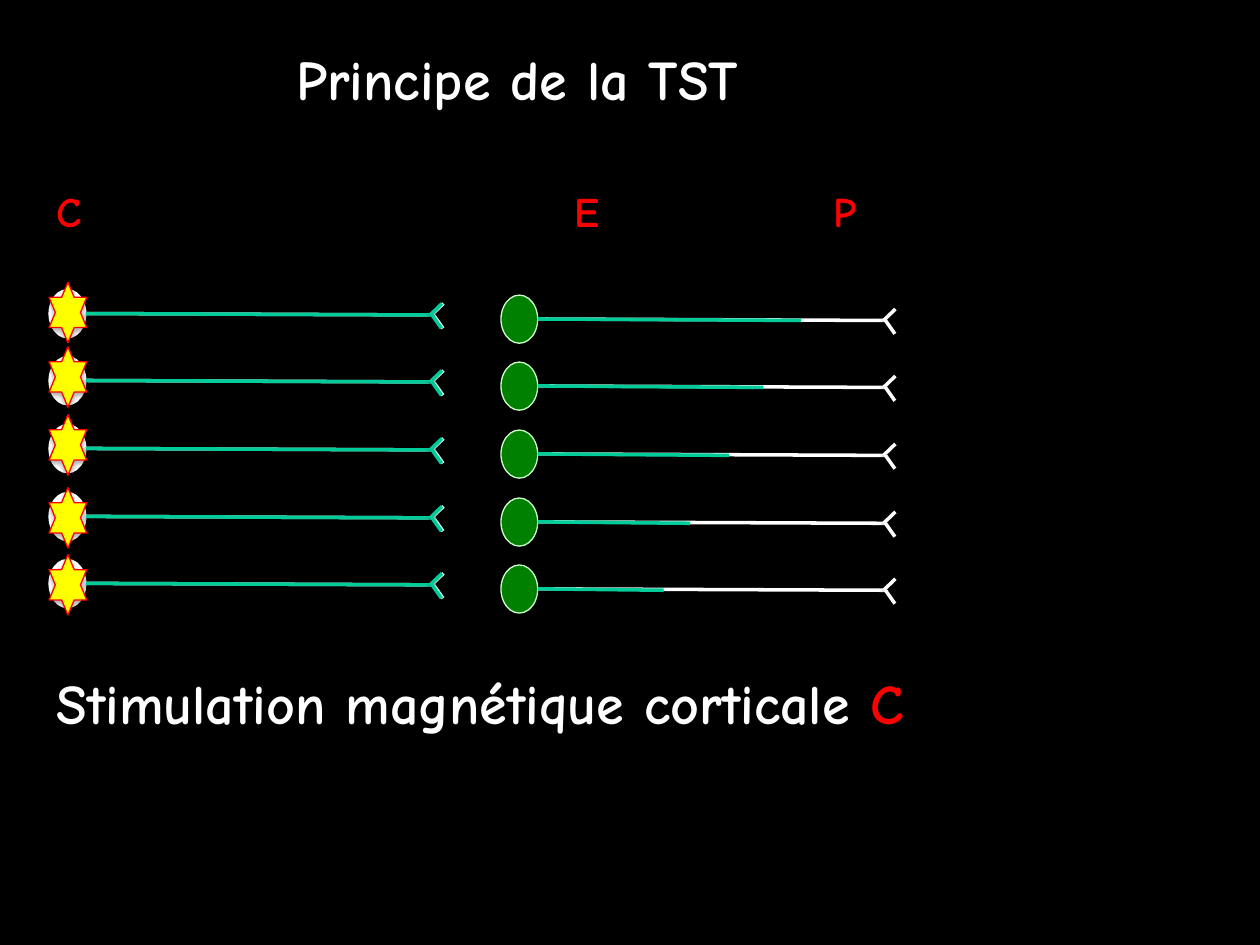
from lxml import etree
from pptx import Presentation
from pptx.dml.color import RGBColor
from pptx.enum.shapes import MSO_CONNECTOR, MSO_SHAPE
from pptx.enum.text import MSO_ANCHOR, MSO_AUTO_SIZE, PP_ALIGN
from pptx.oxml import parse_xml
from pptx.oxml.ns import nsdecls, qn
from pptx.util import Cm, Pt

FONT = "Comic Neue"
WHITE, RED, YELLOW, TEAL = "FFFFFF", "FF0000", "FFFF00", "00CC99"
GREEN, PALE = "008000", "CCFFCC"
BODY_W, BODY_H = 0.74, 0.97
AXON_END = 7.75

# Top of each neuron row, rise of its star, and reach of the signal on the right
ROWS = [
    (5.84, 0.15, 6.05),
    (7.19, 0.20, 5.29),
    (8.56, 0.20, 4.60),
    (9.93, 0.10, 3.81),
    (11.28, 0.10, 3.28),
]


def rgb(colour):
    return RGBColor.from_string(colour)


def add_shadow(sp, alpha):
    sp._element.spPr.append(parse_xml(
        f'<a:effectLst {nsdecls("a")}><a:outerShdw blurRad="39370" dist="20320" '
        'dir="5400000" rotWithShape="0"><a:srgbClr val="000000">'
        f'<a:alpha val="{alpha}000"/></a:srgbClr></a:outerShdw></a:effectLst>'))


def add_line(s, x1, y1, x2, y2, colour):
    line = s.shapes.add_connector(
        MSO_CONNECTOR.STRAIGHT, Cm(x1), Cm(y1), Cm(x2), Cm(y2))
    line.line.color.rgb = rgb(colour)
    line.line.width = Pt(2)
    add_shadow(line, 38)


def add_figure(s, kind, x, y, w, h, fill, outline):
    sp = s.shapes.add_shape(kind, Cm(x), Cm(y), Cm(w), Cm(h))
    sp.fill.solid()
    sp.fill.fore_color.rgb = rgb(fill)
    sp.line.color.rgb = rgb(outline)
    sp.line.width = Pt(0.75)
    add_shadow(sp, 35)


def cell_body(s, x, y, fill, outline):
    add_figure(s, MSO_SHAPE.OVAL, x, y, BODY_W, BODY_H, fill, outline)


def axon(s, x, y, colour, end=AXON_END, forked=True):
    """Draw the fibre of the neuron whose body has its top left at x, y."""
    add_line(s, x + BODY_W, y + 0.48, x + end, y + 0.51, colour)
    if forked:
        tip, mid = x + end, y + 0.51
        add_line(s, tip - 0.04, mid, tip + 0.2, mid - 0.23, colour)
        add_line(s, tip, mid, tip + 0.19, mid + 0.27, colour)


def central_neurons(s, x):
    for y, _, _ in ROWS:
        cell_body(s, x, y, WHITE, WHITE)
        axon(s, x, y, WHITE)
    for y, rise, _ in ROWS:
        add_figure(s, MSO_SHAPE.STAR_6_POINT, x, y - rise, 0.76, 1.22, YELLOW, RED)
    for y, _, _ in ROWS:
        axon(s, x, y, TEAL, AXON_END - 0.03)


def peripheral_neurons(s, x):
    for y, _, reach in ROWS:
        y += 0.11
        axon(s, x, y, WHITE)
        cell_body(s, x, y, GREEN, PALE)
        axon(s, x, y, TEAL, reach, forked=False)


def write(sp, runs, size):
    tf = sp.text_frame
    tf.word_wrap = False
    tf.auto_size = MSO_AUTO_SIZE.SHAPE_TO_FIT_TEXT
    tf.vertical_anchor = MSO_ANCHOR.TOP
    p = tf.paragraphs[0]
    p.alignment = PP_ALIGN.LEFT
    for text, colour in runs:
        r = p.add_run()
        r.text = text
        r.font.name = FONT
        r.font.size = Pt(size)
        r.font.bold = True
        r.font.color.rgb = rgb(colour)
    return p


def add_title(s, x, y, w, h):
    sp = s.shapes.title
    sp.left, sp.top, sp.width, sp.height = Cm(x), Cm(y), Cm(w), Cm(h)
    write(sp, [("Principe de la TST", WHITE)], 32)


def add_text(s, x, y, w, h, runs, size):
    return write(s.shapes.add_textbox(Cm(x), Cm(y), Cm(w), Cm(h)), runs, size)


def add_caption(s, x, y, w, h):
    p = add_text(s, x, y, w, h,
                 [("Stimulation magnétique corticale ", WHITE), ("C", RED)], 32)
    ln = etree.Element(qn("a:ln"), w="9525")
    fill = etree.SubElement(ln, qn("a:solidFill"))
    etree.SubElement(fill, qn("a:srgbClr"), val=RED)
    p.runs[-1].font._element.insert(0, ln)


def main():
    prs = Presentation()
    prs.slide_width, prs.slide_height = Cm(25.4), Cm(19.05)
    s = prs.slides.add_slide(prs.slide_layouts[5])
    s.background.fill.solid()
    s.background.fill.fore_color.rgb = rgb("000000")

    add_title(s, 5.72, 0.76, 10.85, 1.63)
    for letter, x, w in (("C", 0.89, 1.04), ("E", 11.33, 1.04), ("P", 16.56, 0.97)):
        add_text(s, x, 3.62, w, 1.27, [(letter, RED)], 24)
    central_neurons(s, 0.99)
    peripheral_neurons(s, 10.1)
    add_caption(s, 0.89, 13.36, 19.61, 1.63)
    prs.save("out.pptx")


if __name__ == "__main__":
    main()
